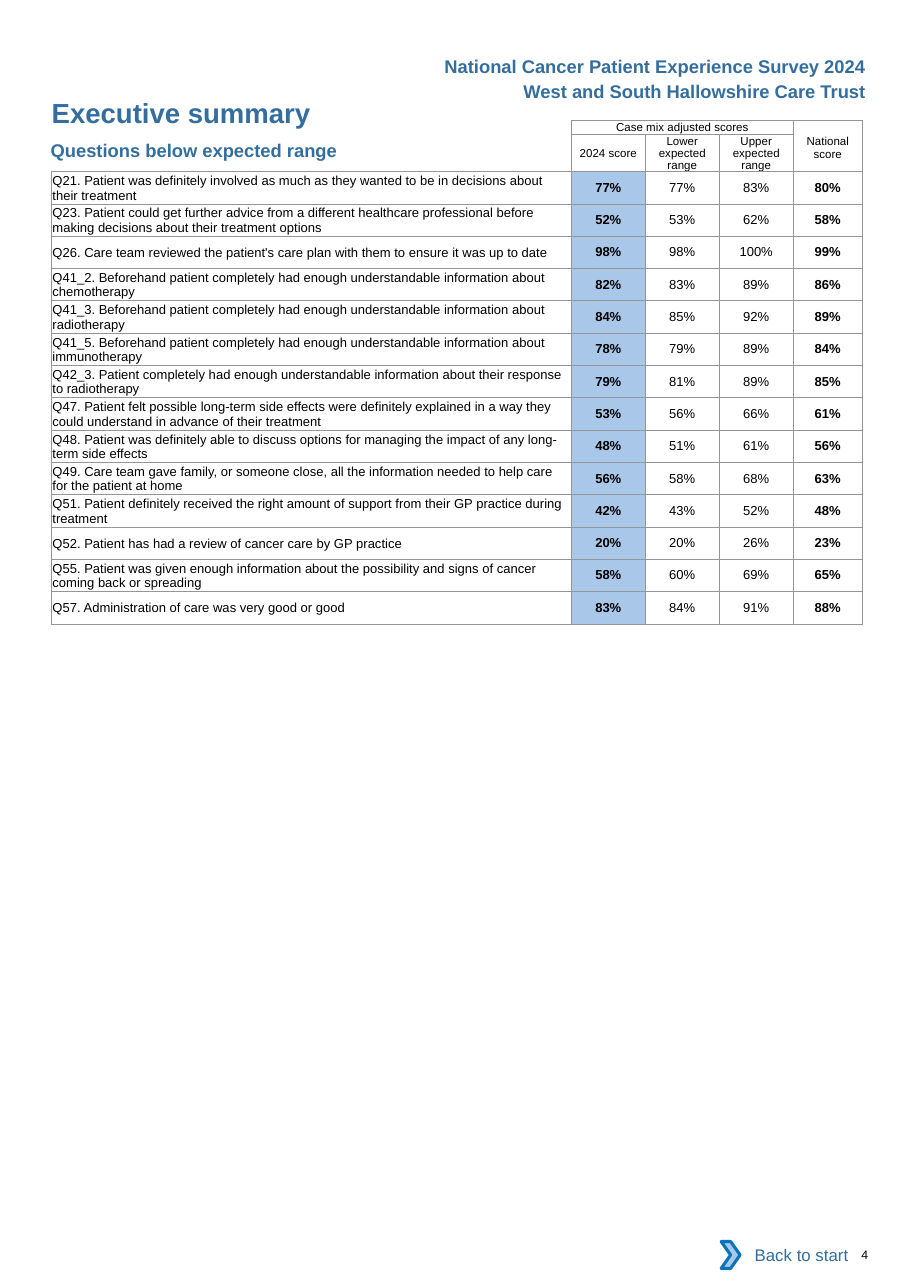
from lxml.etree import SubElement
from pptx import Presentation
from pptx.dml.color import RGBColor
from pptx.enum.shapes import MSO_SHAPE as Shape
from pptx.enum.text import MSO_ANCHOR as Anchor, MSO_AUTO_SIZE as AutoSize, PP_ALIGN as Align
from pptx.oxml.ns import qn
from pptx.util import Pt

BLUE = RGBColor(0x33, 0x6E, 0x9F)
LIGHT_BLUE = RGBColor(0xA8, 0xC7, 0xE9)
CHEVRON_BLUE = RGBColor(0x0A, 0x74, 0xBB)
BORDER_GREY = RGBColor(0x93, 0x95, 0x98)
BLACK = RGBColor(0, 0, 0)
WHITE = RGBColor(255, 255, 255)

PAGE_WIDTH, PAGE_HEIGHT = 594.72, 841.68
TITLE = "Executive summary"

# text, left, top, width, height, size, colour, bold, alignment, inset
TEXTS = [
    ("Questions below expected range", 33.1, 90.8, 217, 14.4, 12, BLUE, True, Align.LEFT, 0),
    ("West and South Hallowshire Care Trust", 270, 52.6, 295.9, 14.4, 12, BLUE, True, Align.RIGHT, 0),
    ("National Cancer Patient Experience Survey 2024", 270, 36.2, 295.9, 14.4, 12, BLUE, True, Align.RIGHT, 0),
    ("4", 563, 815, 29.5, 9.4, 8, BLACK, False, Align.LEFT, 0),
]

GROUP_HEADER = "Case mix adjusted scores"
NATIONAL_HEADER = "National score"
RANGE_HEADERS = ["2024 score", "Lower expected range", "Upper expected range"]

# question, 2024 score, lower range, upper range, national score
QUESTIONS = [
    ("Q21. Patient was definitely involved as much as they wanted to be in decisions about their treatment",
     77, 77, 83, 80),
    ("Q23. Patient could get further advice from a different healthcare professional before making decisions "
     "about their treatment options", 52, 53, 62, 58),
    ("Q26. Care team reviewed the patient's care plan with them to ensure it was up to date", 98, 98, 100, 99),
    ("Q41_2. Beforehand patient completely had enough understandable information about chemotherapy",
     82, 83, 89, 86),
    ("Q41_3. Beforehand patient completely had enough understandable information about radiotherapy",
     84, 85, 92, 89),
    ("Q41_5. Beforehand patient completely had enough understandable information about immunotherapy",
     78, 79, 89, 84),
    ("Q42_3. Patient completely had enough understandable information about their response to radiotherapy",
     79, 81, 89, 85),
    ("Q47. Patient felt possible long-term side effects were definitely explained in a way they could "
     "understand in advance of their treatment", 53, 56, 66, 61),
    ("Q48. Patient was definitely able to discuss options for managing the impact of any long-term side effects",
     48, 51, 61, 56),
    ("Q49. Care team gave family, or someone close, all the information needed to help care for the patient "
     "at home", 56, 58, 68, 63),
    ("Q51. Patient definitely received the right amount of support from their GP practice during treatment",
     42, 43, 52, 48),
    ("Q52. Patient has had a review of cancer care by GP practice", 20, 20, 26, 23),
    ("Q55. Patient was given enough information about the possibility and signs of cancer coming back or "
     "spreading", 58, 60, 69, 65),
    ("Q57. Administration of care was very good or good", 83, 84, 91, 88),
]

TABLE_LEFT, TABLE_TOP = 33.6, 78.8
COLUMN_WIDTHS = [339.8, 48.35, 48.35, 48.35, 45.2]
ROW_HEIGHTS = [9.1, 24.2] + [21.14] * len(QUESTIONS)


def style_text(frame, size, color=BLACK, bold=False, align=Align.CENTER, inset=0):
    frame.word_wrap = True
    frame.margin_left = frame.margin_right = frame.margin_top = frame.margin_bottom = Pt(inset)
    paragraph = frame.paragraphs[0]
    paragraph.alignment = align
    font = paragraph.font
    font.name, font.size, font.bold = "Arial", Pt(size), bold
    font.color.rgb = color


def set_borders(cell, visible):
    """Draw the sides named in visible (of L, R, T, B) and clear the others."""
    properties = cell._tc.get_or_add_tcPr()
    for side in "LRTB":
        line = SubElement(properties, qn("a:ln" + side), w=str(Pt(0.5)))
        if side in visible:
            fill = SubElement(line, qn("a:solidFill"))
            SubElement(fill, qn("a:srgbClr"), val=str(BORDER_GREY))
        else:
            SubElement(line, qn("a:noFill"))


def fill_cell(cell, text, size, bold=False, align=Align.CENTER, fill=None, borders="LRTB"):
    cell.text = text
    style_text(cell.text_frame, size, bold=bold, align=align)
    cell.margin_left = cell.margin_right = cell.margin_top = cell.margin_bottom = 0
    cell.vertical_anchor = Anchor.MIDDLE
    set_borders(cell, borders)
    if fill is None:
        cell.fill.background()
    else:
        cell.fill.solid()
        cell.fill.fore_color.rgb = fill


def add_score_table(slide):
    table = slide.shapes.add_table(
        len(ROW_HEIGHTS), len(COLUMN_WIDTHS), Pt(TABLE_LEFT), Pt(TABLE_TOP),
        Pt(sum(COLUMN_WIDTHS)), Pt(sum(ROW_HEIGHTS))).table
    table.first_row = table.horz_banding = False
    for column, width in zip(table.columns, COLUMN_WIDTHS):
        column.width = Pt(width)
    for row, height in zip(table.rows, ROW_HEIGHTS):
        row.height = Pt(height)

    header_rows = [["", GROUP_HEADER, "", "", NATIONAL_HEADER], ["", *RANGE_HEADERS, ""]]
    for row, headers in enumerate(header_rows):
        for column, header in enumerate(headers):
            cell = table.cell(row, column)
            fill_cell(cell, header, 7.5, borders="LRTB" if column else "RB")
            if header.endswith("range"):
                cell.text_frame.paragraphs[0].line_spacing = Pt(7.6)
                cell.margin_left = cell.margin_right = Pt(3)
                cell.margin_top = Pt(1.4)
    table.cell(0, 4).margin_top = Pt(2)
    table.cell(0, 0).merge(table.cell(1, 0))
    table.cell(0, 1).merge(table.cell(0, 3))
    table.cell(0, 4).merge(table.cell(1, 4))

    for row, (question, *scores) in enumerate(QUESTIONS, start=2):
        question_cell = table.cell(row, 0)
        fill_cell(question_cell, question, 8.5, align=Align.LEFT)
        question_cell.margin_left = question_cell.margin_right = question_cell.margin_top = Pt(0.7)
        for column, score in enumerate(scores, start=1):
            fill_cell(table.cell(row, column), f"{score}%", 8.5, bold=column in (1, 4),
                      fill=LIGHT_BLUE if column == 1 else None)


def add_back_button(slide):
    group = slide.shapes.add_group_shape()
    label = group.shapes.add_shape(Shape.RECTANGLE, Pt(476.6), Pt(805), Pt(85), Pt(30.2))
    label.fill.solid()
    label.fill.fore_color.rgb = WHITE
    label.line.fill.background()
    label.text_frame.text = "Back to start"
    style_text(label.text_frame, 11, BLUE, align=Align.RIGHT, inset=7.2)
    label.text_frame.vertical_anchor = Anchor.MIDDLE

    chevron = group.shapes.add_shape(Shape.CHEVRON, Pt(471.3), Pt(811.3), Pt(12.4), Pt(17.6))
    chevron.fill.solid()
    chevron.fill.fore_color.rgb = LIGHT_BLUE
    chevron.line.color.rgb = CHEVRON_BLUE
    chevron.line.width = Pt(2)
    for shape in (label, chevron):
        shape.shadow.inherit = False


def main():
    presentation = Presentation()
    presentation.slide_width, presentation.slide_height = Pt(PAGE_WIDTH), Pt(PAGE_HEIGHT)
    slide = presentation.slides.add_slide(presentation.slide_layouts[5])

    title = slide.shapes.title
    title.left, title.top, title.width, title.height = Pt(33.8), Pt(62.8), Pt(190), Pt(21.6)
    title.text_frame.text = TITLE
    title.text_frame.auto_size = AutoSize.NONE
    title.text_frame.vertical_anchor = Anchor.MIDDLE
    style_text(title.text_frame, 18, BLUE, True, Align.LEFT)

    add_score_table(slide)
    for text, left, top, width, height, *style in TEXTS:
        box = slide.shapes.add_textbox(Pt(left), Pt(top), Pt(width), Pt(height))
        box.text_frame.text = text
        style_text(box.text_frame, *style)
    add_back_button(slide)
    presentation.save("out.pptx")


if __name__ == "__main__":
    main()
